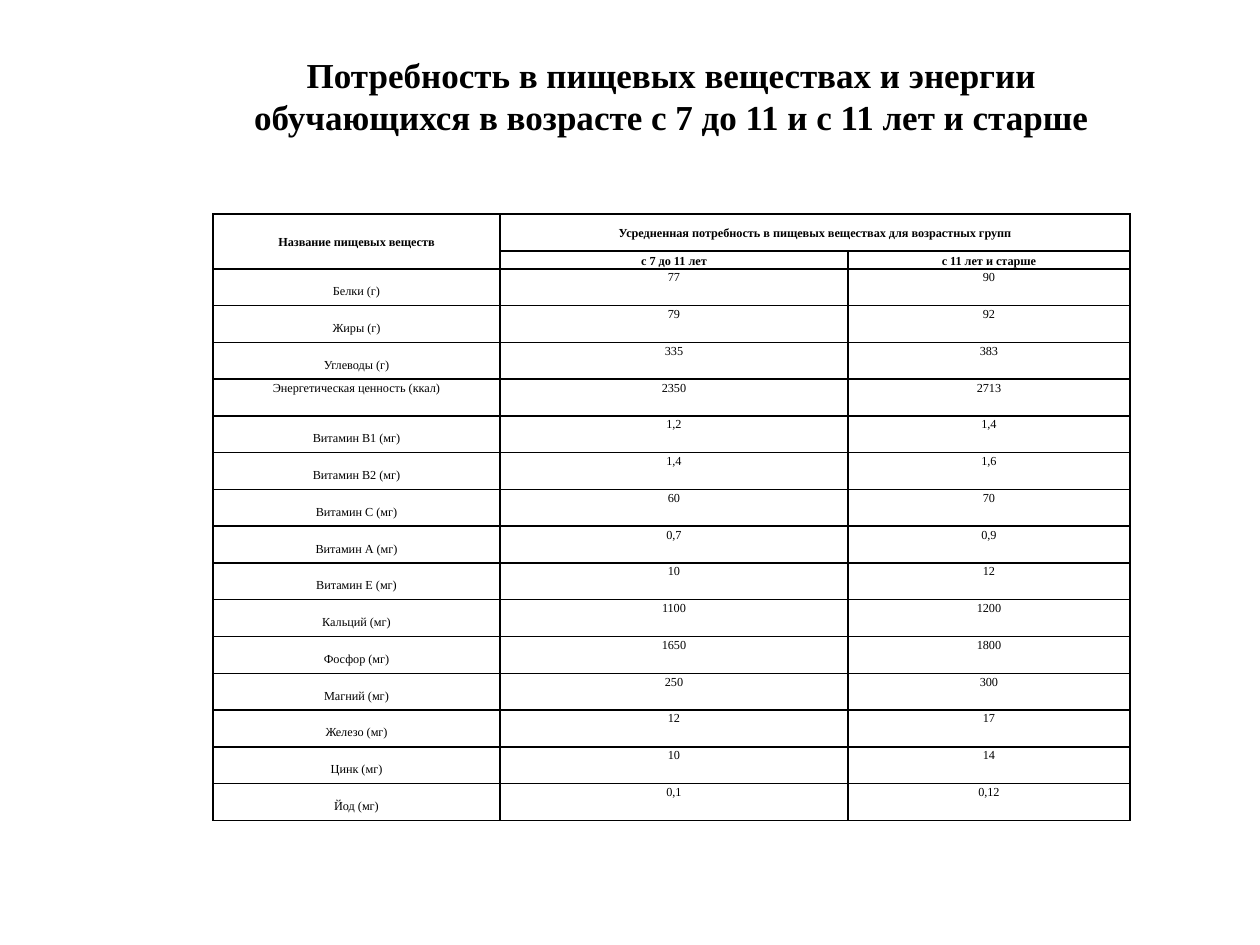
from dataclasses import dataclass

from lxml.etree import SubElement
from pptx import Presentation
from pptx.dml.color import RGBColor
from pptx.enum.text import MSO_ANCHOR as Anchor, MSO_AUTO_SIZE as AutoSize, PP_ALIGN as Align
from pptx.oxml.ns import qn
from pptx.util import Inches, Pt

TITLE = "Потребность в пищевых веществах и энергии обучающихся в возрасте с 7 до 11 и с 11 лет и старше"
NAME_HEADER = "Название пищевых веществ"
GROUP_HEADER = "Усредненная потребность в пищевых веществах для возрастных групп"
AGE_HEADERS = ("с 7 до 11 лет", "с 11 лет и старше")
ENERGY = "Энергетическая ценность (ккал)"
NEEDS = [
    ("Белки (г)", "77", "90"),
    ("Жиры (г)", "79", "92"),
    ("Углеводы (г)", "335", "383"),
    (ENERGY, "2350", "2713"),
    ("Витамин В1 (мг)", "1,2", "1,4"),
    ("Витамин В2 (мг)", "1,4", "1,6"),
    ("Витамин С (мг)", "60", "70"),
    ("Витамин А (мг)", "0,7", "0,9"),
    ("Витамин Е (мг)", "10", "12"),
    ("Кальций (мг)", "1100", "1200"),
    ("Фосфор (мг)", "1650", "1800"),
    ("Магний (мг)", "250", "300"),
    ("Железо (мг)", "12", "17"),
    ("Цинк (мг)", "10", "14"),
    ("Йод (мг)", "0,1", "0,12"),
]


@dataclass(frozen=True)
class Theme:
    font: str = "Times New Roman"
    ink: str = "000000"
    title_size: int = 20
    table_size: int = 7
    line_spacing: float = 1.15
    border: int = 1


THEME = Theme()

# Lengths in px, 126 to the inch
LEFT, WIDTH = 213, 917
TITLE_TOP, TITLE_HEIGHT, TITLE_BOTTOM_INSET = 45, 136, 42
TABLE_TOP = 214
COLUMN_WIDTHS = (287, 348, 282)
HEADER_HEIGHTS = (37, 18)
BODY_HEIGHT = 552
SIDE_INSET, NAME_DROP = 1, 14


def px(length):
    return Inches(length / 126)


def style(para, size, bold):
    para.alignment = Align.CENTER
    para.font.name = THEME.font
    para.font.size = Pt(size)
    para.font.bold = bold
    para.font.color.rgb = RGBColor.from_string(THEME.ink)


def add_borders(cell):
    properties = cell._tc.get_or_add_tcPr()
    for side in ("lnL", "lnR", "lnT", "lnB"):
        line = SubElement(properties, qn(f"a:{side}"), w=str(Pt(THEME.border)))
        fill = SubElement(line, qn("a:solidFill"))
        SubElement(fill, qn("a:srgbClr"), val=THEME.ink)


def fill_cell(cell, text, header=False, drop=0):
    cell.margin_left = cell.margin_right = px(SIDE_INSET)
    cell.margin_top, cell.margin_bottom = px(drop), 0
    cell.vertical_anchor = Anchor.MIDDLE if header else Anchor.TOP
    cell.text = text
    para = cell.text_frame.paragraphs[0]
    para.line_spacing = THEME.line_spacing
    style(para, THEME.table_size, header)


def add_title(page):
    title = page.shapes.title
    title.left, title.top = px(LEFT), px(TITLE_TOP)
    title.width, title.height = px(WIDTH), px(TITLE_HEIGHT)
    frame = title.text_frame
    frame.text = TITLE
    frame.word_wrap = True
    frame.auto_size = AutoSize.NONE
    frame.vertical_anchor = Anchor.MIDDLE
    frame.margin_bottom = px(TITLE_BOTTOM_INSET)
    style(frame.paragraphs[0], THEME.title_size, True)


def add_needs_table(page):
    header_count = len(HEADER_HEIGHTS)
    heights = [px(h) for h in HEADER_HEIGHTS] + [px(BODY_HEIGHT) // len(NEEDS)] * len(NEEDS)
    table = page.shapes.add_table(
        len(heights), len(COLUMN_WIDTHS), px(LEFT), px(TABLE_TOP), px(WIDTH), sum(heights)
    ).table
    table.first_row = table.horz_banding = False
    for column, width in zip(table.columns, COLUMN_WIDTHS):
        column.width = px(width)
    for row, height in zip(table.rows, heights):
        row.height = height

    table.cell(0, 0).merge(table.cell(1, 0))
    table.cell(0, 1).merge(table.cell(0, 2))
    fill_cell(table.cell(0, 0), NAME_HEADER, header=True)
    fill_cell(table.cell(0, 1), GROUP_HEADER, header=True)
    for column, text in enumerate(AGE_HEADERS, 1):
        fill_cell(table.cell(1, column), text, header=True)
    for row, (name, *values) in enumerate(NEEDS, header_count):
        fill_cell(table.cell(row, 0), name, drop=0 if name == ENERGY else NAME_DROP)
        for column, value in enumerate(values, 1):
            fill_cell(table.cell(row, column), value)

    for cell in table.iter_cells():
        add_borders(cell)
        cell.fill.background()


def main():
    deck = Presentation()
    deck.slide_width, deck.slide_height = Inches(10), Inches(7.5)
    page = deck.slides.add_slide(deck.slide_layouts.get_by_name("Title Only"))
    add_needs_table(page)
    add_title(page)
    deck.save("out.pptx")


if __name__ == "__main__":
    main()
